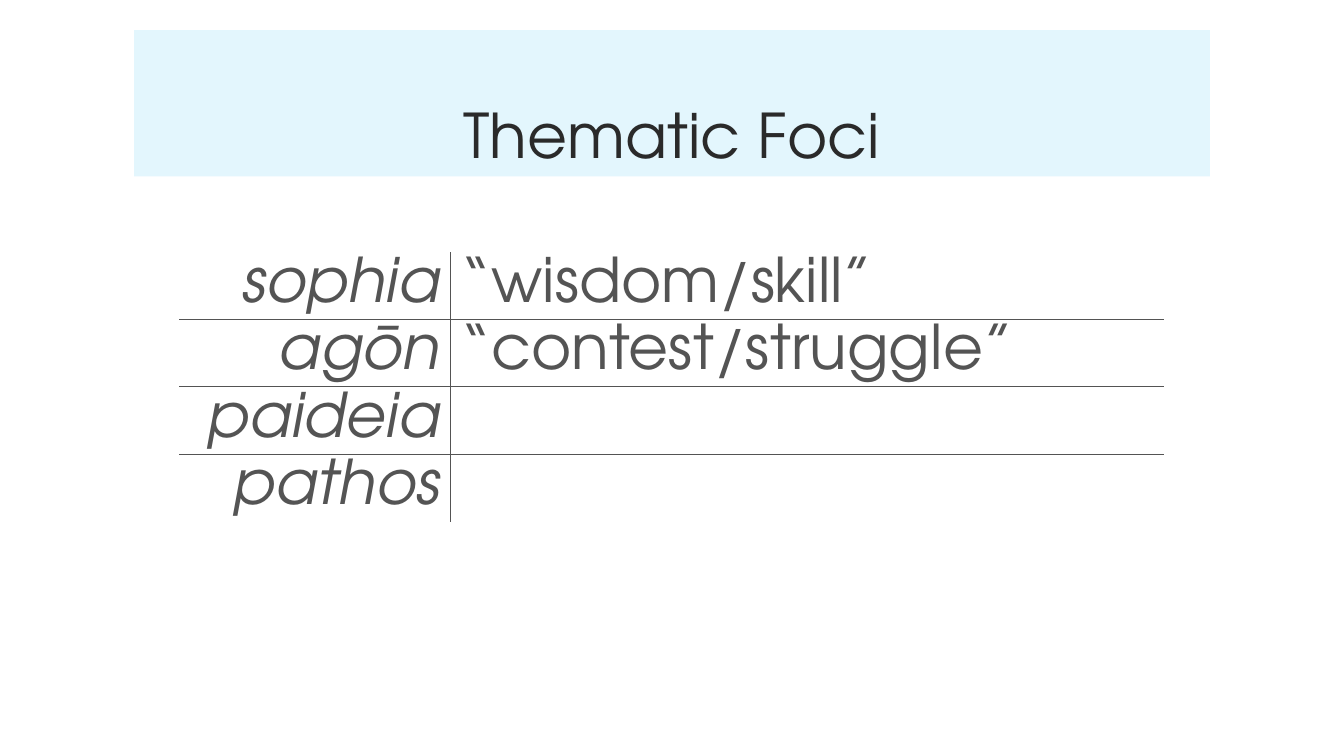
from lxml import etree
from pptx import Presentation
from pptx import util as u
from pptx.dml.color import RGBColor
from pptx.enum import text
from pptx.oxml import ns

FONT = "TeX Gyre Adventor"
GREY = "545454"
THEMES = [
    ("sophia", "“wisdom/skill”"),
    ("agōn", "“contest/struggle”"),
    ("paideia", ""),
    ("pathos", ""),
]


def color(hex_code):
    return RGBColor.from_string(hex_code)


def write(frame, content, size=44, fill=GREY, italic=False,
          align=text.PP_ALIGN.LEFT, spacing=None):
    paragraph = frame.paragraphs[0]
    paragraph.alignment = align
    paragraph.line_spacing = spacing
    run = paragraph.add_run()
    run.text = content
    run.font.name = FONT
    run.font.size = u.Pt(size)
    run.font.italic = italic
    run.font.color.rgb = color(fill)


def set_borders(cell, visible):
    properties = cell._tc.get_or_add_tcPr()
    for position, side in enumerate("LRTB"):
        line = etree.Element(ns.qn(f"a:ln{side}"), w=str(u.Pt(1)))
        if side in visible:
            fill = etree.SubElement(line, ns.qn("a:solidFill"))
            etree.SubElement(fill, ns.qn("a:srgbClr"), val=GREY)
        else:
            etree.SubElement(line, ns.qn("a:noFill"))
        properties.insert(position, line)


def add_title(slide, content):
    title = slide.shapes.title
    title.left, title.top = u.Inches(1.33), u.Inches(0.3)
    title.width, title.height = u.Inches(10.67), u.Inches(1.45)
    title.fill.solid()
    title.fill.fore_color.rgb = color("00B0F0")
    tint = title.fill._xPr.find(".//" + ns.qn("a:srgbClr"))
    etree.SubElement(tint, ns.qn("a:alpha"), val="11000")
    frame = title.text_frame
    frame.word_wrap = True
    frame.auto_size = text.MSO_AUTO_SIZE.NONE
    frame.vertical_anchor = text.MSO_ANCHOR.BOTTOM
    write(frame, content, fill="2A2A2A", align=text.PP_ALIGN.CENTER, spacing=0.9)


def add_theme_table(slide, themes):
    last = len(themes) - 1
    table = slide.shapes.add_table(
        len(themes), 2, u.Inches(1.78), u.Inches(2.5),
        u.Inches(9.77), u.Inches(0.41 * len(themes))).table
    table.first_row = table.horz_banding = False
    for column, width in zip(table.columns, (2.69, 7.08)):
        column.width = u.Inches(width)
    for row, entries in enumerate(themes):
        for column, content in enumerate(entries):
            cell = table.cell(row, column)
            cell.fill.background()
            sides = "RL"[column]
            sides += "T" if row > 0 else ""
            sides += "B" if row < last else ""
            set_borders(cell, sides)
            if content:
                is_term = column == 0
                align = text.PP_ALIGN.RIGHT if is_term else text.PP_ALIGN.LEFT
                write(cell.text_frame, content, italic=is_term, align=align)


def main():
    presentation = Presentation()
    presentation.slide_width = u.Inches(13.33)
    presentation.slide_height = u.Inches(7.5)
    slide = presentation.slides.add_slide(presentation.slide_layouts[5])
    add_title(slide, "Thematic Foci")
    add_theme_table(slide, THEMES)
    presentation.save("out.pptx")


if __name__ == "__main__":
    main()
